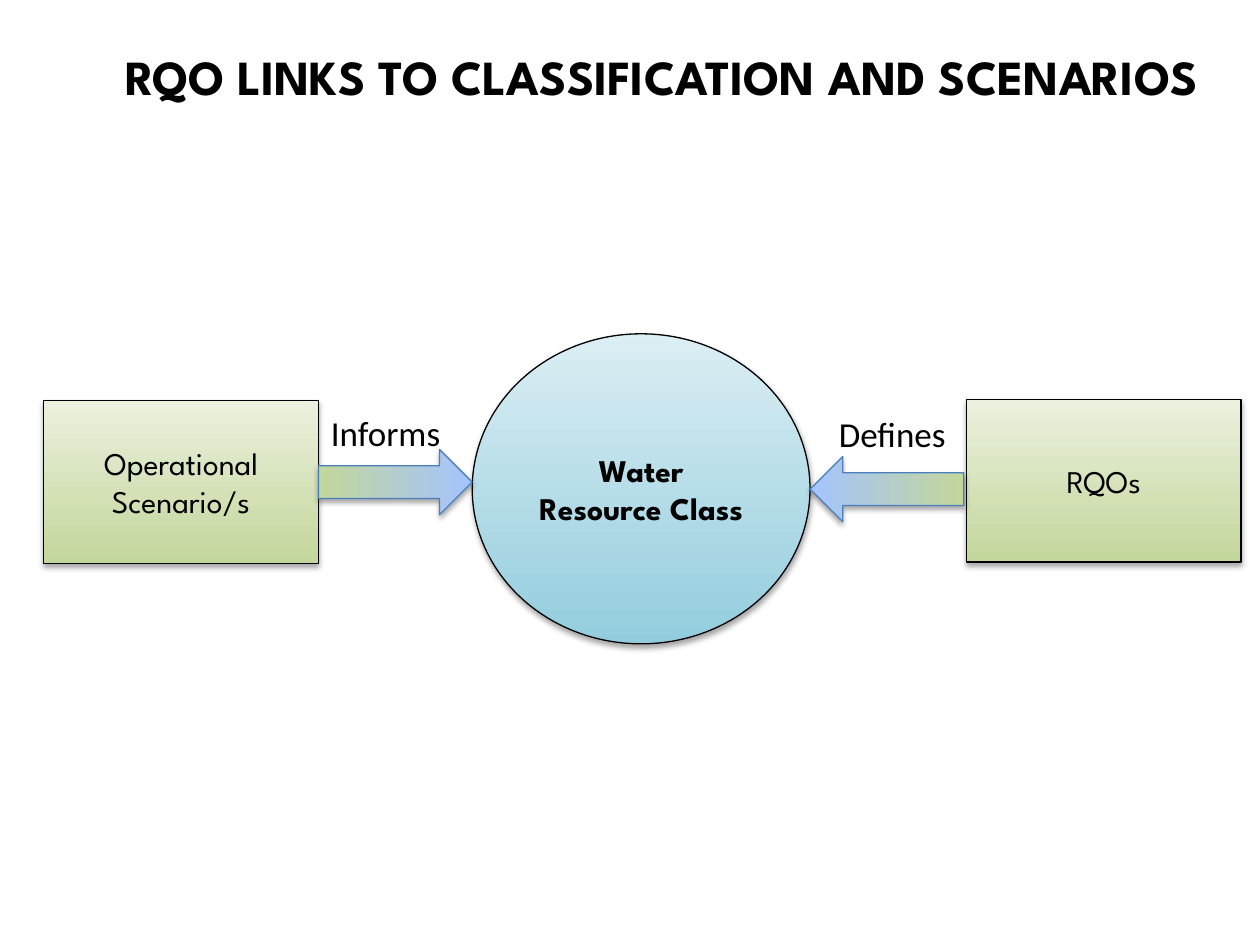
from dataclasses import dataclass

from lxml.etree import SubElement
from pptx import Presentation
from pptx.dml.color import RGBColor
from pptx.enum.shapes import MSO_SHAPE
from pptx.enum.text import MSO_ANCHOR, PP_ALIGN
from pptx.oxml.ns import qn
from pptx.slide import Slide
from pptx.util import Cm, Pt

BLACK = RGBColor(0x00, 0x00, 0x00)
GREEN = RGBColor(0xC3, 0xD6, 0x9B)
PALE_GREEN = RGBColor(0xEB, 0xF1, 0xDE)
BLUE = RGBColor(0x93, 0xCD, 0xDD)
PALE_BLUE = RGBColor(0xDB, 0xEE, 0xF4)
ARROW_BLUE = RGBColor(0xA4, 0xC4, 0xFF)
ARROW_EDGE = RGBColor(0x4B, 0x7E, 0xBC)

NODE_TEXT = {"name": "League Spartan", "size": Pt(18), "bold": False}
CLASS_TEXT = {**NODE_TEXT, "bold": True}
TITLE_TEXT = {**CLASS_TEXT, "size": Pt(28)}
LABEL_TEXT = {"name": "Calibri", "size": Pt(20)}


@dataclass
class Diagram:
    """Draws styled diagram elements on the current slide."""

    page: Slide
    line_width: Pt = Pt(0.75)

    def add_words(self, frame, text, style, align):
        frame.word_wrap = True
        para = frame.paragraphs[0]
        para.alignment = align
        span = para.add_run()
        span.text = text
        for key, value in style.items():
            setattr(span.font, key, value)
        span.font.color.rgb = BLACK
        return para

    def cast_shadow(self, shape):
        shape.shadow.inherit = False
        effects = shape._element.spPr.find(qn("a:effectLst"))
        shadow = SubElement(effects, qn("a:outerShdw"), blurRad="40000",
                            dist="23000", dir="5400000", rotWithShape="0")
        color = SubElement(shadow, qn("a:srgbClr"), val=str(BLACK))
        SubElement(color, qn("a:alpha"), val="35000")

    def block(self, kind, place, colors, angle, edge):
        shape = self.page.shapes.add_shape(kind, *map(Cm, place))
        shape.fill.gradient()
        shape.fill.gradient_angle = angle
        for stop, color, position in zip(shape.fill.gradient_stops, colors, (0, 1)):
            stop.color.rgb = color
            stop.position = position
        shape.line.color.rgb = edge
        shape.line.width = self.line_width
        self.cast_shadow(shape)
        return shape

    def node(self, kind, place, text, colors, style=NODE_TEXT):
        shape = self.block(kind, place, colors, 90, BLACK)
        shape.text_frame.vertical_anchor = MSO_ANCHOR.MIDDLE
        self.add_words(shape.text_frame, text, style, PP_ALIGN.CENTER)

    def arrow(self, left, top, rotation=0):
        shape = self.block(MSO_SHAPE.RIGHT_ARROW, (left, top, 3.1, 1.32),
                           (GREEN, ARROW_BLUE), 0, ARROW_EDGE)
        shape.rotation = rotation

    def label(self, place, text, style=LABEL_TEXT, align=PP_ALIGN.LEFT):
        box = self.page.shapes.add_textbox(*map(Cm, place))
        return self.add_words(box.text_frame, text, style, align)

    def title(self, place, text):
        para = self.label(place, text, TITLE_TEXT, PP_ALIGN.CENTER)
        para.level = 1
        properties = para._p.get_or_add_pPr()
        properties.set("marL", str(Cm(1.27)))
        properties.set("indent", "0")


def main():
    deck = Presentation()
    deck.slide_width, deck.slide_height = Cm(25.4), Cm(19.05)
    diagram = Diagram(deck.slides.add_slide(deck.slide_layouts[6]))

    greens = (GREEN, PALE_GREEN)
    diagram.node(MSO_SHAPE.OVAL, (9.52, 6.73, 6.81, 6.25),
                 "Water Resource Class", (BLUE, PALE_BLUE), CLASS_TEXT)
    diagram.node(MSO_SHAPE.RECTANGLE, (0.88, 8.08, 5.54, 3.28),
                 "Operational Scenario/s", greens)
    diagram.arrow(6.42, 9.06)
    diagram.node(MSO_SHAPE.RECTANGLE, (19.48, 8.05, 5.54, 3.28), "RQOs", greens)
    diagram.arrow(16.33, 9.2, 180)
    diagram.label((6.42, 8.18, 3.53, 1.11), "Informs")
    diagram.label((16.66, 8.2, 3.53, 1.11), "Defines")
    diagram.title((0, 0.81, 25.4, 2.64), "RQO LINKS TO CLASSIFICATION AND SCENARIOS")

    deck.save("out.pptx")


if __name__ == "__main__":
    main()
